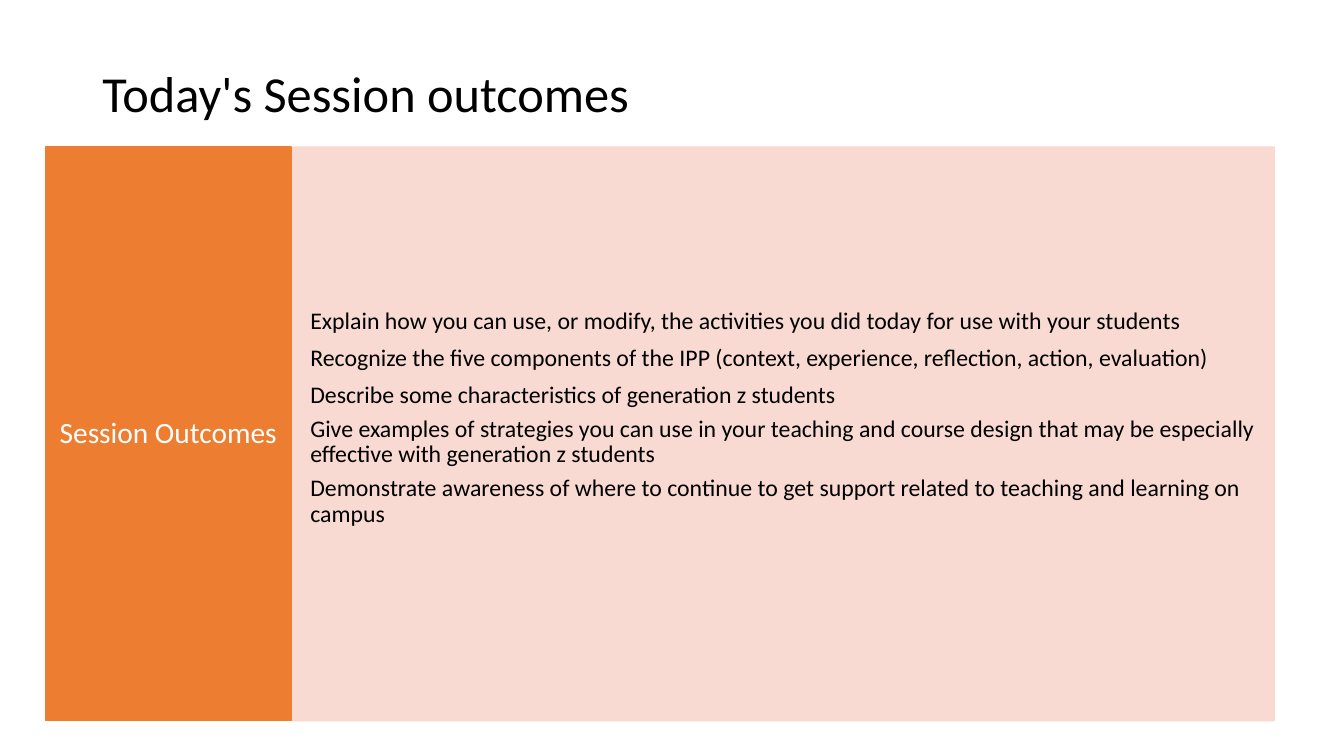
import pptx
import pptx.util
import pptx.dml.color
import pptx.enum.shapes
import pptx.enum.text
from dataclasses import dataclass
from lxml import etree

Cm, Pt = pptx.util.Cm, pptx.util.Pt
RGB = pptx.dml.color.RGBColor.from_string
ALIGN = pptx.enum.text.PP_ALIGN
ANCHOR = pptx.enum.text.MSO_ANCHOR

TITLE = "Today's Session outcomes"
LABEL = "Session Outcomes"
# Each outcome with its line spacing
OUTCOMES = [
    ("Explain how you can use, or modify, the activities you did today for use with your students", 1.0),
    ("Recognize the five components of the IPP (context, experience, reflection, action, evaluation)", 1.0),
    ("Describe some characteristics of generation z students", 1.0),
    ("Give examples of strategies you can use in your teaching and course design "
     "that may be especially effective with generation z students", 0.9),
    ("Demonstrate awareness of where to continue to get support related to "
     "teaching and learning on campus", 0.9),
]


@dataclass(frozen=True)
class Theme:
    font: str = "Calibri"
    dark: str = "000000"
    light: str = "FFFFFF"
    accent: str = "ED7D31"
    tint: str = "F8D7CE"
    opacity: int = 90
    title: int = 36
    label: int = 21
    body: int = 17
    gap: int = 6


THEME = Theme()


def write(shape, items, size, color, align, anchor, insets):
    """Fill a shape with (text, line spacing) paragraphs; insets run left, top, right, bottom."""
    frame = shape.text_frame
    frame.word_wrap = True
    frame.vertical_anchor = anchor
    (frame.margin_left, frame.margin_top,
     frame.margin_right, frame.margin_bottom) = map(Cm, insets)
    frame.text = "\n".join(text for text, _ in items)
    for para, (_, spacing) in zip(frame.paragraphs, items):
        para.alignment = align
        para.line_spacing = spacing
        para.space_after = Pt(THEME.gap)
        font = para.runs[0].font
        font.name, font.size = THEME.font, Pt(size)
        font.color.rgb = RGB(color)
    para.space_after = Pt(0)


def panel(slide, left, width, color, opacity=100):
    """Add one full-height block of the outcome band."""
    box = slide.shapes.add_shape(
        pptx.enum.shapes.MSO_SHAPE.RECTANGLE, Cm(left), Cm(TOP), Cm(width), Cm(HEIGHT))
    box.shadow.inherit = False
    box.fill.solid()
    box.fill.fore_color.rgb = RGB(color)
    box.line.color.rgb = RGB(color)
    box.line.width = Pt(1)
    if opacity < 100:
        for tone in box.element.spPr.iter(pptx.oxml.ns.qn("a:srgbClr")):
            etree.SubElement(tone, pptx.oxml.ns.qn("a:alpha"), val=str(opacity * 1000))
    return box


LEFT, TOP, HEIGHT = 1.14, 3.71, 14.45
SIDE, MAIN = 6.2, 24.77
LIFT = 0.87  # extra bottom inset that raises the list above the middle

deck = pptx.Presentation()
deck.slide_width, deck.slide_height = Cm(33.87), Cm(19.05)
slide = deck.slides.add_slide(deck.slide_layouts[6])

title = slide.shapes.add_textbox(Cm(2.33), Cm(1.55), Cm(29.21), Cm(3.15))
write(title, [(TITLE, 0.9)], THEME.title, THEME.dark,
      ALIGN.LEFT, ANCHOR.TOP, (0.25, 0.2, 0.25, 0.13))

main = panel(slide, LEFT + SIDE, MAIN, THEME.tint, THEME.opacity)
write(main, OUTCOMES, THEME.body, THEME.dark,
      ALIGN.LEFT, ANCHOR.MIDDLE, (0.48, 3.68, 0.48, 3.68 + LIFT))

side = panel(slide, LEFT, SIDE, THEME.accent)
write(side, [(LABEL, 0.9)], THEME.label, THEME.light,
      ALIGN.CENTER, ANCHOR.MIDDLE, (0.33, 1.42, 0.33, 1.42))

deck.save("out.pptx")
